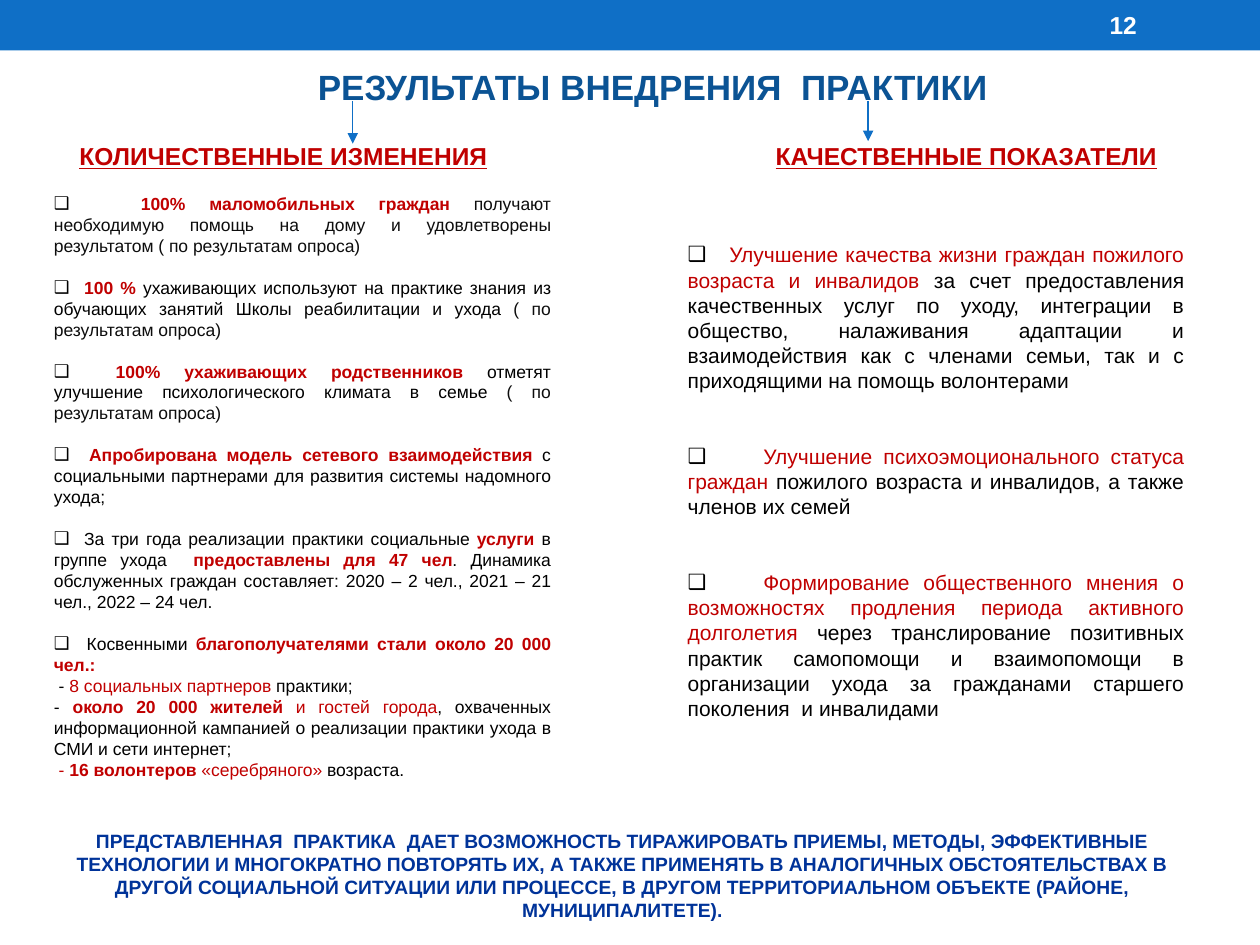
from lxml import etree
from pptx import Presentation
from pptx.dml.color import RGBColor
from pptx.enum.shapes import MSO_CONNECTOR as Connector, MSO_SHAPE as Shape
from pptx.enum.text import MSO_ANCHOR as Anchor, MSO_AUTO_SIZE as AutoSize, PP_ALIGN as Align
from pptx.oxml.ns import qn
from pptx.util import Inches, Pt

WIDTH, HEIGHT = 10, 7.5
BLUE, NAVY, ROYAL = "0F6FC6", "0B5394", "003399"
RED, BLACK, SOFT, WHITE = "C00000", "000000", "0D0D0D", "FFFFFF"
PLAIN, GREY, ACCENT, STRONG = (BLACK, False), (SOFT, False), (RED, False), (RED, True)
LEADING = 1.2
COLUMN_WIDTH, HEADING_WIDTH = 4.14, 3.46

QUANTITATIVE = [
    (0.69, [("100% маломобильных граждан ", STRONG),
            ("получают необходимую помощь на дому и удовлетворены результатом "
             "( по результатам опроса)", GREY)]),
    (0.24, [("100 % ", STRONG),
            ("ухаживающих используют на практике знания из обучающих занятий "
             "Школы реабилитации и ухода ", PLAIN),
            ("( по результатам опроса)", GREY)]),
    (0.49, [("100% ухаживающих родственников ", STRONG),
            ("отметят улучшение психологического климата в семье ", PLAIN),
            ("( по результатам опроса)", GREY)]),
    (0.28, [("Апробирована модель сетевого взаимодействия ", STRONG),
            ("с социальными партнерами для развития системы надомного ухода;", PLAIN)]),
    (0.24, [("За три года реализации практики социальные ", PLAIN),
            ("услуги ", STRONG),
            ("в группе ухода  ", PLAIN),
            ("предоставлены для 47 чел", STRONG),
            (". Динамика обслуженных граждан составляет: 2020 – 2 чел., "
             "2021 – 21 чел., 2022 – 24 чел.", PLAIN)]),
    (0.26, [("Косвенными ", PLAIN),
            ("благополучателями стали около 20 000 чел.:", STRONG)]),
    (None, [(" - ", PLAIN), ("8 социальных партнеров ", ACCENT), ("практики;", PLAIN)]),
    (None, [("- ", PLAIN),
            ("около 20 000 жителей ", STRONG),
            ("и гостей города", ACCENT),
            (", охваченных информационной кампанией о реализации практики ухода "
             "в СМИ и сети интернет;", PLAIN)]),
    (None, [(" - ", ACCENT), ("16 волонтеров", STRONG),
            (" «серебряного»", ACCENT), (" возраста.", PLAIN)]),
]

QUALITATIVE = [
    (0.33, [("Улучшение качества жизни граждан пожилого возраста и инвалидов ", ACCENT),
            ("за счет предоставления качественных услуг по уходу, интеграции в общество, "
             "налаживания адаптации и взаимодействия как с членами семьи, так и с "
             "приходящими на помощь волонтерами", PLAIN)]),
    (0.6, [("Улучшение психоэмоционального статуса граждан ", ACCENT),
           ("пожилого возраста и инвалидов, а также членов их семей", PLAIN)]),
    (0.6, [("Формирование общественного мнения о возможностях продления периода "
            "активного долголетия ", ACCENT),
           ("через транслирование позитивных практик самопомощи и взаимопомощи в "
            "организации ухода за гражданами старшего поколения  и инвалидами", PLAIN)]),
]

CONCLUSION = (
    "ПРЕДСТАВЛЕННАЯ  ПРАКТИКА  ДАЕТ ВОЗМОЖНОСТЬ ТИРАЖИРОВАТЬ ПРИЕМЫ, МЕТОДЫ, ЭФФЕКТИВНЫЕ "
    "ТЕХНОЛОГИИ И МНОГОКРАТНО ПОВТОРЯТЬ ИХ, А ТАКЖЕ ПРИМЕНЯТЬ В АНАЛОГИЧНЫХ "
    "ОБСТОЯТЕЛЬСТВАХ В ДРУГОЙ СОЦИАЛЬНОЙ СИТУАЦИИ ИЛИ ПРОЦЕССЕ, В ДРУГОМ "
    "ТЕРРИТОРИАЛЬНОМ ОБЪЕКТЕ (РАЙОНЕ, МУНИЦИПАЛИТЕТЕ).")


def color(code):
    """Turn a hex string into a colour."""
    return RGBColor.from_string(code)


def style_font(font, size, code, bold=False, underline=None):
    """Set the look of a paragraph's font."""
    font.name, font.size = "Arial", Pt(size)
    font.bold, font.underline = bold, underline
    font.color.rgb = color(code)


def place(shape, left, top, width, height):
    """Move and size a shape in inches."""
    shape.left, shape.top = Inches(left), Inches(top)
    shape.width, shape.height = Inches(width), Inches(height)


def add_box(page, left, top, width, height):
    """Add an empty wrapping text box."""
    box = page.shapes.add_textbox(*map(Inches, (left, top, width, height)))
    box.text_frame.word_wrap = True
    return box


def write_line(shape, text, size, code, anchor=Anchor.TOP, underline=None):
    """Write one centred bold paragraph in a shape."""
    frame = shape.text_frame
    frame.word_wrap, frame.auto_size, frame.vertical_anchor = True, AutoSize.NONE, anchor
    para = frame.paragraphs[0]
    para.text, para.alignment = text, Align.CENTER
    para.line_spacing = Pt(size * LEADING)
    style_font(para.font, size, code, True, underline)


def add_bullet(para, text_start):
    """Give a paragraph a square bullet and a tab stop for its first word."""
    props = para._p.get_or_add_pPr()
    props.set("marL", "0")
    props.set("indent", "0")
    etree.SubElement(props, qn("a:buFont"), typeface="Arial")
    etree.SubElement(props, qn("a:buChar"), char="❑")
    tabs = etree.SubElement(props, qn("a:tabLst"))
    etree.SubElement(tabs, qn("a:tab"), pos=str(Inches(text_start)), algn="l")


def add_list(page, left, top, height, items, size, blank_lines):
    """Add a justified list with bulleted and plain items."""
    frame = add_box(page, left, top, COLUMN_WIDTH, height).text_frame
    for number, (text_start, spans) in enumerate(items):
        para = frame.add_paragraph() if number else frame.paragraphs[0]
        para.alignment, para.line_spacing = Align.JUSTIFY, Pt(size * LEADING)
        if number and text_start:
            para.space_before = Pt(size * LEADING * blank_lines)
        style_font(para.font, size, BLACK)
        if text_start:
            add_bullet(para, text_start)
            para.add_run().text = "\t"
        for text, (code, bold) in spans:
            span = para.add_run()
            span.text, span.font.bold = text, bold
            span.font.color.rgb = color(code)


def add_arrow(page, x, top, bottom):
    """Add a downward arrow."""
    arrow = page.shapes.add_connector(
        Connector.STRAIGHT, *map(Inches, (x, top, x, bottom)))
    arrow.line.color.rgb, arrow.line.width = color(BLUE), Pt(0.75)
    etree.SubElement(arrow.line._get_or_add_ln(), qn("a:tailEnd"), type="triangle")
    etree.SubElement(arrow._element.spPr, qn("a:effectLst"))


def add_band(page, height):
    """Add the coloured band across the top."""
    band = page.shapes.add_shape(Shape.RECTANGLE, 0, 0, Inches(WIDTH), Inches(height))
    band.shadow.inherit = False
    band.fill.solid()
    band.fill.fore_color.rgb = color(BLUE)
    band.line.fill.background()


def main():
    """Build the slide and save it."""
    deck = Presentation()
    deck.slide_width, deck.slide_height = Inches(WIDTH), Inches(HEIGHT)
    page = deck.slides.add_slide(deck.slide_layouts[5])
    add_band(page, 0.4)
    write_line(add_box(page, 8.33, 0.02, 1.17, 0.36), "12", 14, WHITE, Anchor.MIDDLE)
    title = page.shapes.title
    place(title, 2.17, 0.47, 6.02, 0.44)
    write_line(title, "РЕЗУЛЬТАТЫ ВНЕДРЕНИЯ  ПРАКТИКИ", 20, NAVY)
    for left, heading in ((0.52, "КОЛИЧЕСТВЕННЫЕ ИЗМЕНЕНИЯ"),
                          (5.94, "КАЧЕСТВЕННЫЕ ПОКАЗАТЕЛИ")):
        box = add_box(page, left, 1.07, HEADING_WIDTH, 0.34)
        write_line(box, heading, 14, RED, underline=True)
    add_list(page, 0.33, 1.48, 4.98, QUANTITATIVE, 10, 1)
    add_list(page, 5.36, 1.87, 4.11, QUALITATIVE, 12, 2)
    write_line(add_box(page, 0.33, 6.53, 9.22, 0.84), CONCLUSION, 11, ROYAL)
    for x, bottom in ((2.8, 1.14), (6.89, 1.12)):
        add_arrow(page, x, 0.8, bottom)
    deck.save("out.pptx")


if __name__ == "__main__":
    main()
